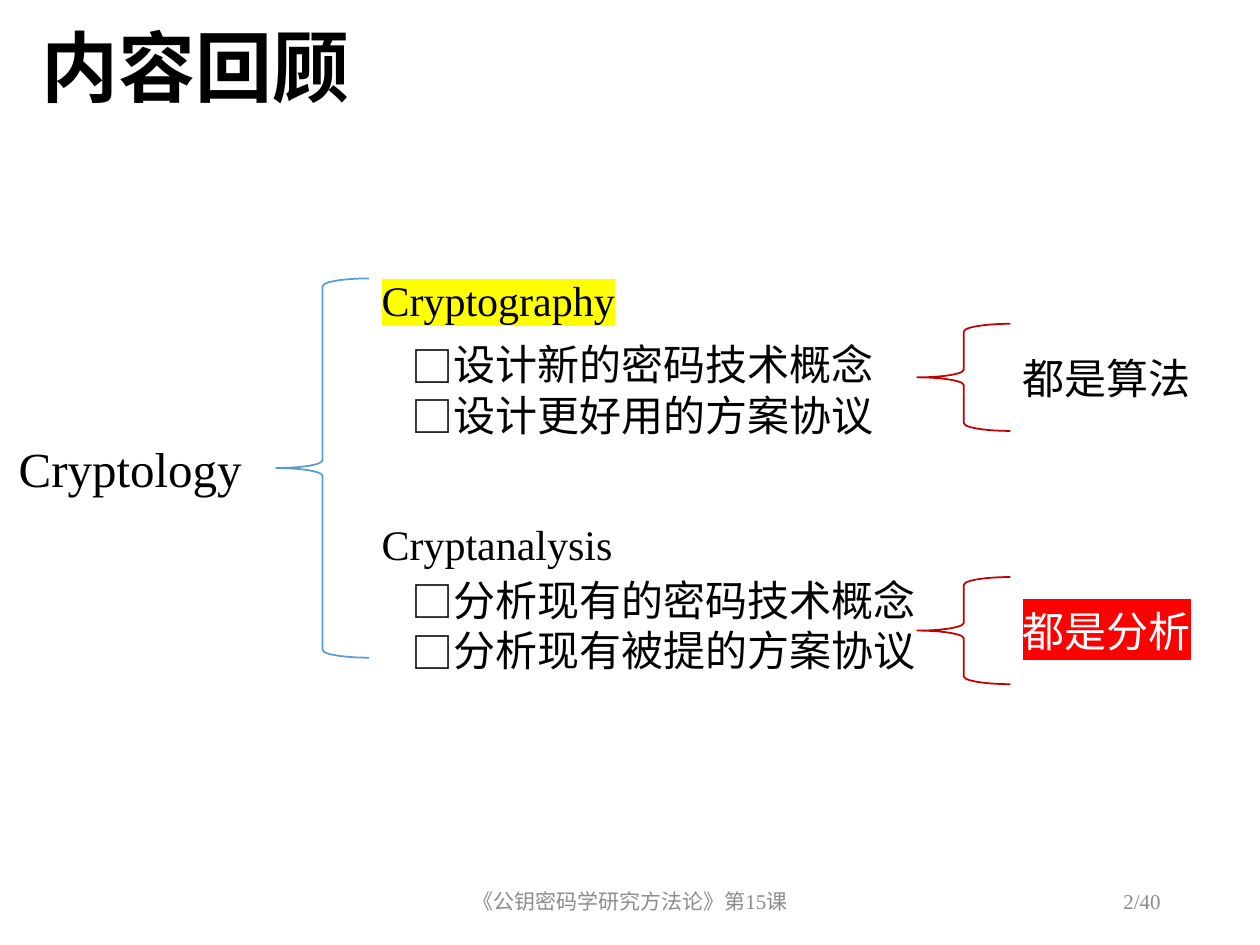
from pptx import Presentation
from pptx.dml.color import RGBColor
from pptx.enum.shapes import MSO_SHAPE
from pptx.enum.text import MSO_ANCHOR, PP_ALIGN
from pptx.oxml import parse_xml
from pptx.oxml.ns import nsdecls
from pptx.util import Inches, Pt

BLACK = RGBColor(0, 0, 0)
WHITE = RGBColor(255, 255, 255)
GRAY = RGBColor(0x8C, 0x8C, 0x8C)
BLUE = RGBColor(0x5B, 0x9B, 0xD5)
DARK = RGBColor(0xC0, 0, 0)
YELLOW = RGBColor(255, 255, 0)
RED = RGBColor(255, 0, 0)
SANS = "Noto Sans CJK SC"
SERIF = "Times New Roman"

TITLE = "内容回顾"
ROOT = "Cryptology"
FOOT = "《公钥密码学研究方法论》第15课"
PAGE = "2/40"
GROUPS = [
    dict(head="Cryptography", items=["设计新的密码技术概念", "设计更好用的方案协议"],
         note="都是算法", ink=BLACK, mark=(YELLOW, None), tops=(2.13, 2.64, 2.57)),
    dict(head="Cryptanalysis", items=["分析现有的密码技术概念", "分析现有被提的方案协议"],
         note="都是分析", ink=WHITE, mark=(None, RED), tops=(4.07, 4.51, 4.58)),
]
BRANCH, LIST, SIDE, NOTE = 2.93, 3.17, 7.28, 8.02
BRACE = 0.74

deck = Presentation()
deck.slide_width, deck.slide_height = Inches(10), Inches(7.5)
slide = deck.slides.add_slide(deck.slide_layouts[6])


def write(lines, at, size, ink=BLACK, font=SERIF, bold=False, mark=None,
          align=PP_ALIGN.LEFT, anchor=MSO_ANCHOR.TOP, bullet=None):
    frame = slide.shapes.add_textbox(*map(Inches, at)).text_frame
    frame.word_wrap = True
    frame.vertical_anchor = anchor
    frame.text = "\n".join(lines)
    for par in frame.paragraphs:
        par.alignment = align
        if bullet:
            props = par._p.get_or_add_pPr()
            props.set("marL", str(Inches(0.31)))
            props.set("indent", str(-Inches(0.31)))
            props.append(parse_xml(f'<a:buFont {nsdecls("a")} typeface="{SANS}"/>'))
            props.append(parse_xml(f'<a:buChar {nsdecls("a")} char="{bullet}"/>'))
        for run in par.runs:
            run.font.size = Pt(size)
            run.font.bold = bold
            run.font.color.rgb = ink
            run.font.name = font
            latin = run._r.rPr.find("{*}latin")
            if mark:
                latin.addprevious(parse_xml(
                    f'<a:highlight {nsdecls("a")}><a:srgbClr val="{mark}"/></a:highlight>'))
            latin.addnext(parse_xml(f'<a:ea {nsdecls("a")} typeface="{SANS}"/>'))
    return frame


def brace(left, top, high, ink):
    shape = slide.shapes.add_shape(
        MSO_SHAPE.LEFT_BRACE, *map(Inches, (left, top, BRACE, high)))
    shape.shadow.inherit = False
    shape.fill.background()
    shape.line.color.rgb = ink
    shape.line.width = Pt(1)


title = write([TITLE], (0.23, 0.19, 9.57, 0.92), 44, font=SANS, bold=True)
title.paragraphs[0].line_spacing = 0.9
write([FOOT], (3.31, 6.95, 3.38, 0.4), 12, GRAY,
      align=PP_ALIGN.CENTER, anchor=MSO_ANCHOR.MIDDLE)
write([PAGE], (7.06, 6.95, 2.25, 0.4), 12, GRAY,
      align=PP_ALIGN.RIGHT, anchor=MSO_ANCHOR.MIDDLE)
write([ROOT], (0.05, 3.43, 2.45, 0.57), 28)
brace(BRANCH - BRACE, 2.21, 3.01, BLUE)

for group in GROUPS:
    head, body, side = group["tops"]
    first, last = group["mark"]
    write([group["head"]], (BRANCH, head, 2.58, 0.5), 24, mark=first)
    write(group["items"], (LIST, body, 5, 0.91), 24, bullet="□")
    brace(SIDE, side, 0.85, DARK)
    write([group["note"]], (NOTE, side + 0.18, 1.78, 0.5), 24,
          group["ink"], mark=last)

deck.save("out.pptx")
